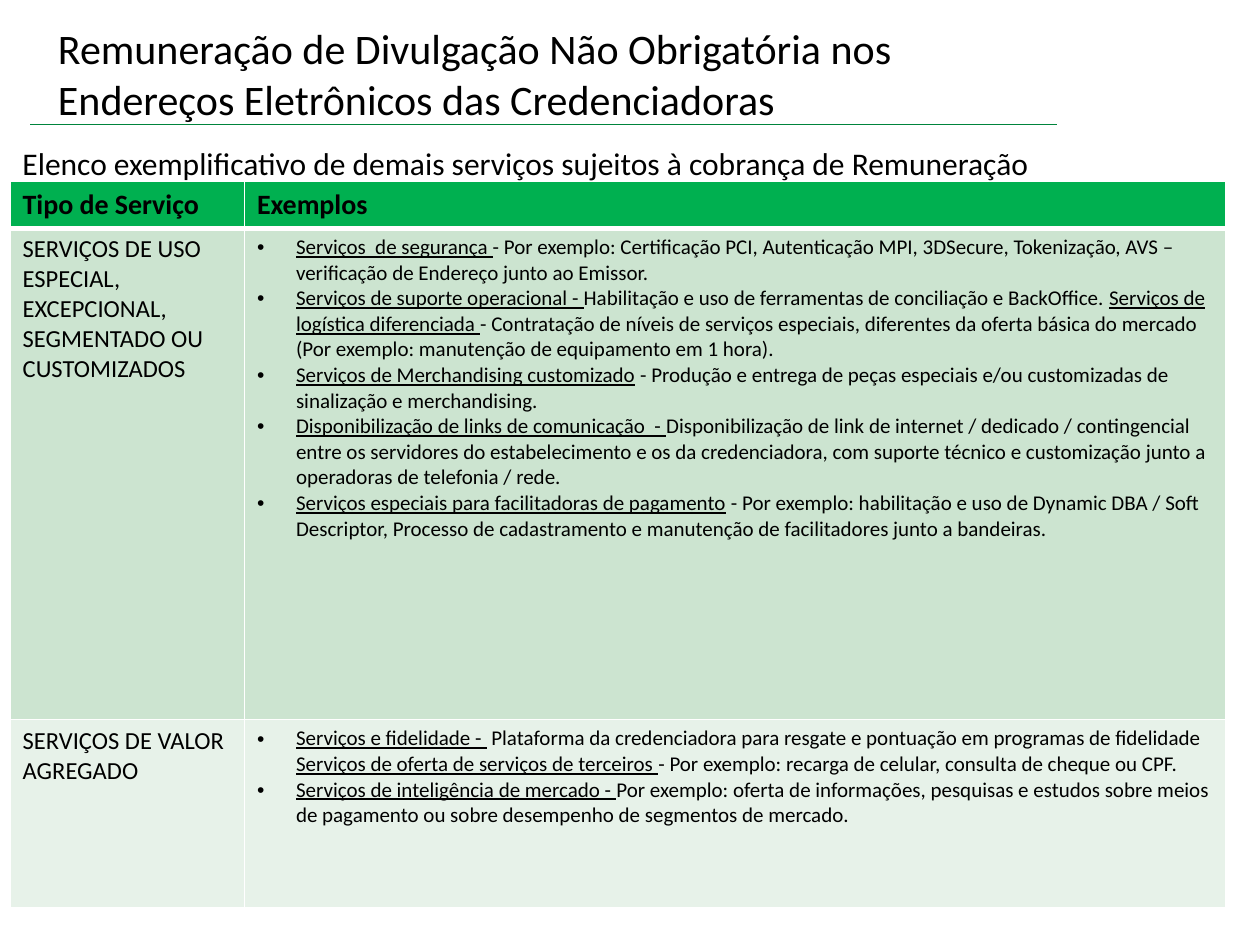
from dataclasses import dataclass

import pptx
import pptx.dml.color
import pptx.enum.shapes
import pptx.enum.text
import pptx.oxml.ns
import pptx.util
from lxml import etree

BLACK = pptx.dml.color.RGBColor(0x00, 0x00, 0x00)
WHITE = pptx.dml.color.RGBColor(0xFF, 0xFF, 0xFF)
RULE_GREEN = pptx.dml.color.RGBColor(0x00, 0x84, 0x3C)
HEADER_GREEN = pptx.dml.color.RGBColor(0x00, 0xB0, 0x50)
BAND_DARK = pptx.dml.color.RGBColor(0xCC, 0xE4, 0xD0)
BAND_LIGHT = pptx.dml.color.RGBColor(0xE7, 0xF2, 0xE9)
FONT = "Calibri"
INDENT = pptx.util.Inches(0.31)


@dataclass
class Frame:
    """Position and size on a grid of 100 columns by 75 rows."""
    left: float
    top: float
    width: float
    height: float


@dataclass
class Service:
    """A row of the table; each example is a list of (text, underlined)."""
    name: str
    fill: pptx.dml.color.RGBColor
    examples: list


SERVICES = [
    Service("SERVIÇOS DE USO ESPECIAL, EXCEPCIONAL, SEGMENTADO OU CUSTOMIZADOS", BAND_DARK, [
        [("Serviços  de segurança ", True),
         ("- Por exemplo: Certificação PCI, Autenticação MPI, 3DSecure, Tokenização, "
          "AVS – verificação de Endereço junto ao Emissor.", False)],
        [("Serviços de suporte operacional - ", True),
         ("Habilitação e uso de ferramentas de conciliação e BackOffice. ", False),
         ("Serviços de logística diferenciada ", True),
         ("- Contratação de níveis de serviços especiais, diferentes da oferta básica do "
          "mercado (Por exemplo: manutenção de equipamento em 1 hora).", False)],
        [("Serviços de Merchandising customizado", True),
         (" - Produção e entrega de peças especiais e/ou customizadas de sinalização e "
          "merchandising.", False)],
        [("Disponibilização de links de comunicação  - ", True),
         ("Disponibilização de link de internet / dedicado / contingencial entre os "
          "servidores do estabelecimento e os da credenciadora, com suporte técnico e "
          "customização junto a operadoras de telefonia / rede.", False)],
        [("Serviços especiais para facilitadoras de pagamento", True),
         (" - Por exemplo: habilitação e uso de Dynamic DBA / Soft Descriptor, Processo de "
          "cadastramento e manutenção de facilitadores junto a bandeiras.", False)],
    ]),
    Service("SERVIÇOS DE VALOR AGREGADO", BAND_LIGHT, [
        [("Serviços e fidelidade - ", True),
         (" Plataforma da credenciadora para resgate e pontuação em programas de "
          "fidelidade ", False),
         ("Serviços de oferta de serviços de terceiros ", True),
         ("- Por exemplo: recarga de celular, consulta de cheque ou CPF.", False)],
        [("Serviços de inteligência de mercado - ", True),
         ("Por exemplo: oferta de informações, pesquisas e estudos sobre meios de pagamento "
          "ou sobre desempenho de segmentos de mercado.", False)],
    ]),
]


def grid(cells: float) -> int:
    return pptx.util.Inches(cells / 10)


def place(frame: Frame) -> tuple:
    return tuple(grid(n) for n in (frame.left, frame.top, frame.width, frame.height))


def format_span(span, size: float, bold: bool = False, underline: bool = False) -> None:
    span.font.name = FONT
    span.font.size = pptx.util.Pt(size)
    span.font.bold = bold
    span.font.underline = underline
    span.font.color.rgb = BLACK


def write(text_frame, text: str, size: float, bold: bool = False) -> None:
    text_frame.text = text
    format_span(text_frame.paragraphs[0].runs[0], size, bold)


def write_examples(text_frame, examples: list) -> None:
    for index, example in enumerate(examples):
        para = text_frame.add_paragraph() if index else text_frame.paragraphs[0]
        properties = para._p.get_or_add_pPr()
        properties.set("marL", str(INDENT))
        properties.set("indent", str(-INDENT))
        etree.SubElement(properties, pptx.oxml.ns.qn("a:buFont"), typeface="Arial")
        etree.SubElement(properties, pptx.oxml.ns.qn("a:buChar"), char="•")
        for text, underlined in example:
            span = para.add_run()
            span.text = text
            format_span(span, 12, underline=underlined)


def style_cell(cell, fill, top: float = 1, bottom: float = 1) -> None:
    """Draw white borders (widths in points), then fill the cell."""
    properties = cell._tc.get_or_add_tcPr()
    for side, width in (("L", 1), ("R", 1), ("T", top), ("B", bottom)):
        border = etree.SubElement(properties, pptx.oxml.ns.qn(f"a:ln{side}"),
                                  w=str(pptx.util.Pt(width)))
        solid = etree.SubElement(border, pptx.oxml.ns.qn("a:solidFill"))
        etree.SubElement(solid, pptx.oxml.ns.qn("a:srgbClr"), val=str(WHITE))
    cell.fill.solid()
    cell.fill.fore_color.rgb = fill


def add_rule(page, left: float, right: float, row: float) -> None:
    rule = page.shapes.add_connector(pptx.enum.shapes.MSO_CONNECTOR.STRAIGHT,
                                     grid(left), grid(row), grid(right), grid(row))
    rule.line.color.rgb = RULE_GREEN
    rule.line.width = pptx.util.Pt(0.75)
    etree.SubElement(rule.element.spPr, pptx.oxml.ns.qn("a:effectLst"))


def add_title(page, frame: Frame, text: str) -> None:
    title = page.shapes.title
    title.left, title.top, title.width, title.height = place(frame)
    text_frame = title.text_frame
    write(text_frame, text, 24)
    text_frame.word_wrap = True
    text_frame.auto_size = pptx.enum.text.MSO_AUTO_SIZE.NONE
    text_frame.vertical_anchor = pptx.enum.text.MSO_ANCHOR.MIDDLE
    text_frame.margin_left = text_frame.margin_right = grid(0.4)
    text_frame.margin_top = text_frame.margin_bottom = grid(0.4)
    text_frame.paragraphs[0].alignment = pptx.enum.text.PP_ALIGN.LEFT


def add_services(page, frame: Frame, columns: tuple, rows: tuple) -> None:
    table = page.shapes.add_table(len(rows), len(columns), *place(frame)).table
    table.horz_banding = False
    for column, width in zip(table.columns, columns):
        column.width = grid(width)
    for row, height in zip(table.rows, rows):
        row.height = grid(height)

    for cell, heading in zip(table.rows[0].cells, ("Tipo de Serviço", "Exemplos")):
        write(cell.text_frame, heading, 16, bold=True)
        style_cell(cell, HEADER_GREEN, bottom=3)

    for index, service in enumerate(SERVICES, start=1):
        name, examples = table.rows[index].cells
        write(name.text_frame, service.name, 14)
        write_examples(examples.text_frame, service.examples)
        for cell in (name, examples):
            style_cell(cell, service.fill, top=3 if index == 1 else 1)


def add_subtitle(page, frame: Frame, text: str) -> None:
    box = page.shapes.add_textbox(*place(frame))
    box.text_frame.word_wrap = True
    write(box.text_frame, text, 18)


def main() -> None:
    deck = pptx.Presentation()
    deck.slide_width, deck.slide_height = grid(100), grid(75)
    page = deck.slides.add_slide(deck.slide_layouts.get_by_name("Title Only"))

    # Heading and its rule
    add_rule(page, 2.4, 83.9, 9.9)
    add_title(page, Frame(4.2, 2.9, 79.1, 5.8),
              "Remuneração de Divulgação Não Obrigatória nos Endereços Eletrônicos "
              "das Credenciadoras")

    # Services table with its caption
    add_services(page, Frame(0.8, 14.4, 96.5, 57.6), (18.6, 77.9), (3.7, 39, 14.9))
    add_subtitle(page, Frame(0.8, 10.9, 95.5, 4),
                 "Elenco exemplificativo de demais serviços sujeitos à cobrança de Remuneração")

    deck.save("out.pptx")


if __name__ == "__main__":
    main()
